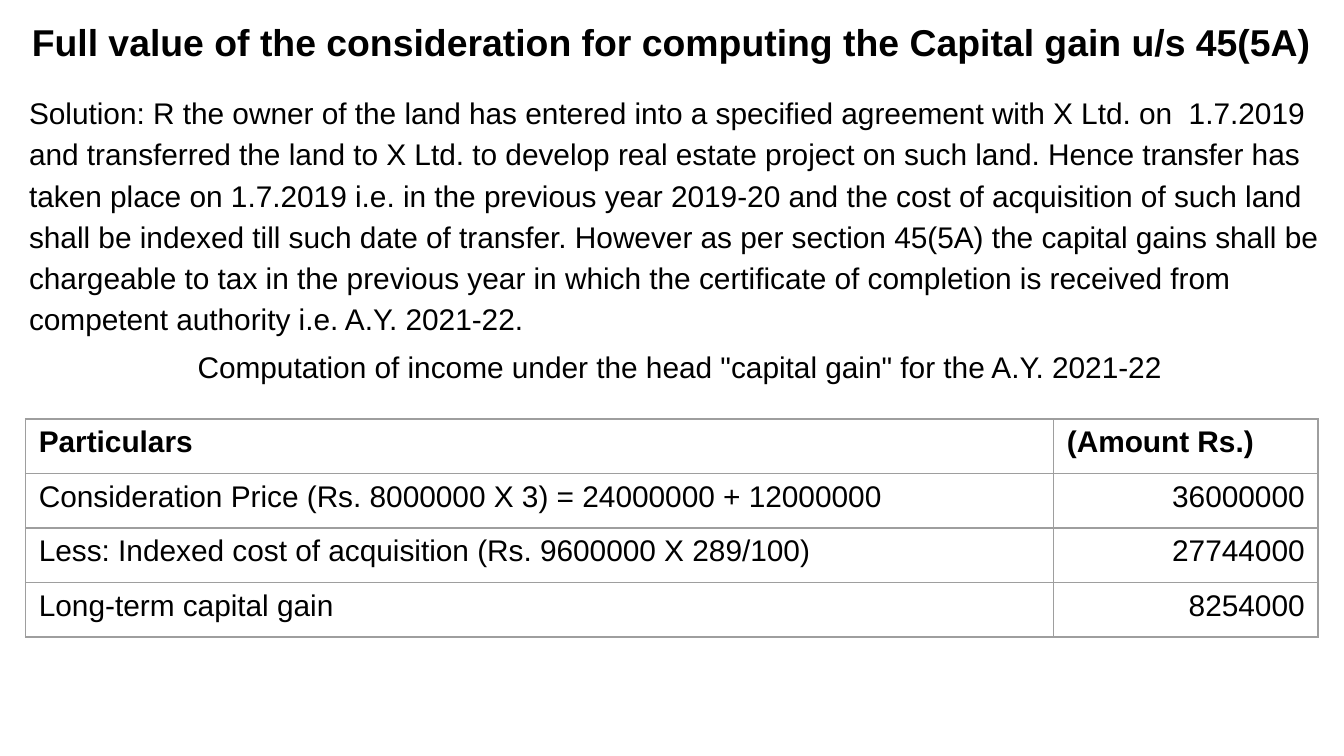
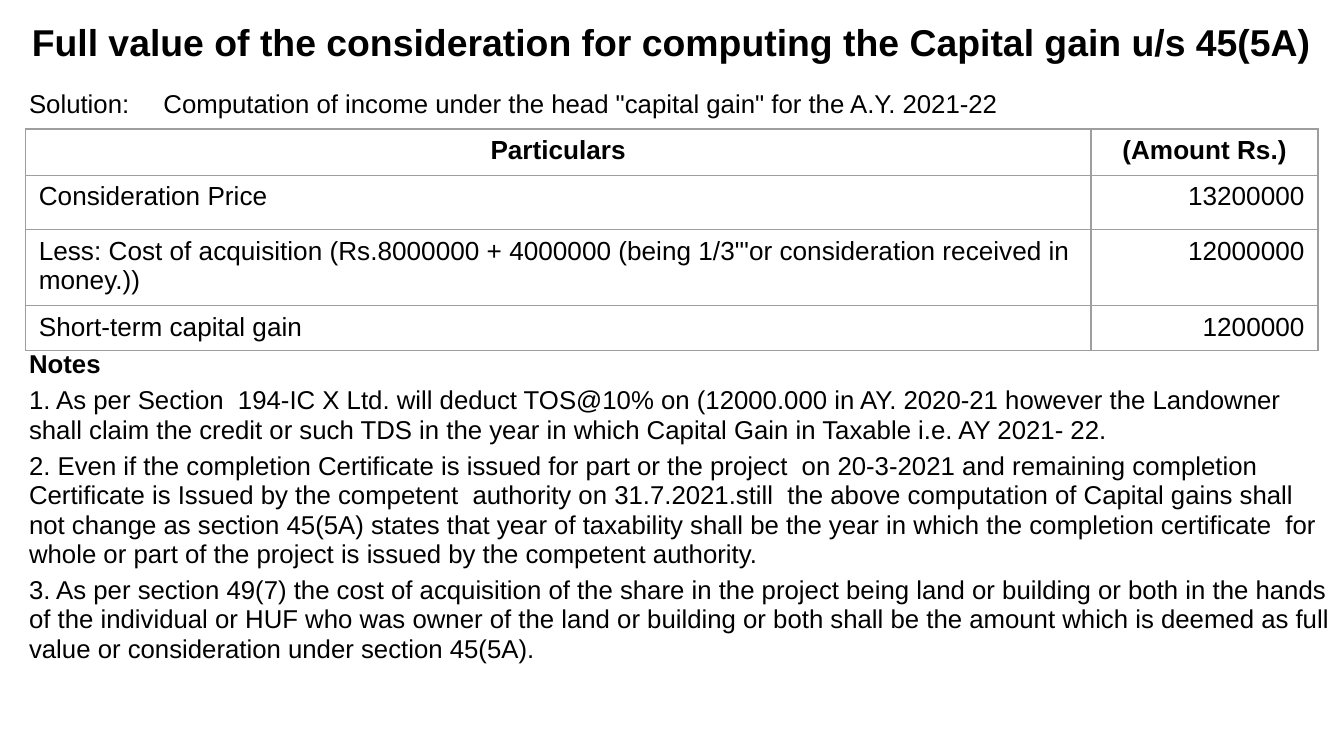
from dataclasses import dataclass

from lxml import etree
from pptx import Presentation
from pptx.dml.color import RGBColor
from pptx.enum.text import MSO_ANCHOR, PP_ALIGN
from pptx.oxml.ns import qn
from pptx.util import Cm, Pt

LEFT, CENTER, RIGHT = PP_ALIGN.LEFT, PP_ALIGN.CENTER, PP_ALIGN.RIGHT
TOP, MIDDLE = MSO_ANCHOR.TOP, MSO_ANCHOR.MIDDLE
BLANK_LAYOUT = 6

# Page measures in centimetres
PAGE_W, PAGE_H = 25.4, 14.29
TITLE_H = 1.57
TABLE_X = 0.48
BODY_INDENT = 0.3

HEADING = "Full value of the consideration for computing the Capital gain u/s 45(5A)"
COMPUTATION = 'Computation of income under the head "capital gain" for the A.Y. 2021-22'
COLUMN_HEADS = ("Particulars", "(Amount Rs.)")


@dataclass(frozen=True)
class Theme:
    font: str = "Arial"
    ink: RGBColor = RGBColor(0x00, 0x00, 0x00)
    rule: str = "9E9E9E"
    rule_width: float = 0.75
    title: float = 20
    large: float = 16
    table: float = 14
    notes: float = 13.8
    gap: float = 3.6


class Deck:
    """Holds the theme and the slide being filled."""

    def __init__(self, theme):
        self.theme = theme
        self.prs = Presentation()
        self.prs.slide_width, self.prs.slide_height = Cm(PAGE_W), Cm(PAGE_H)
        self.slide = None

    def new_slide(self):
        self.slide = self.prs.slides.add_slide(self.prs.slide_layouts[BLANK_LAYOUT])
        self.title(HEADING)

    def fill_paragraph(self, paragraph, text, size, bold=False, **layout):
        for name, value in layout.items():
            setattr(paragraph, name, value)
        run = paragraph.add_run()
        run.text = text
        font_values = {"name": self.theme.font, "size": Pt(size), "bold": bold}
        for name, value in font_values.items():
            setattr(run.font, name, value)
        run.font.color.rgb = self.theme.ink

    def frame(self, y, height, anchor):
        box = self.slide.shapes.add_textbox(0, Cm(y), Cm(PAGE_W), Cm(height))
        frame = box.text_frame
        frame.word_wrap = True
        frame.vertical_anchor = anchor
        return frame

    def title(self, text):
        frame = self.frame(0, TITLE_H, MIDDLE)
        self.fill_paragraph(frame.paragraphs[0], text, self.theme.title, True,
                            alignment=CENTER)

    def body(self, paragraphs, size, spacing):
        """Each paragraph is its text and a dict of format changes."""
        frame = self.frame(TITLE_H, PAGE_H - TITLE_H, TOP)
        for index, (text, changes) in enumerate(paragraphs):
            paragraph = frame.add_paragraph() if index else frame.paragraphs[0]
            layout = {"alignment": LEFT, "line_spacing": spacing,
                      "space_before": Pt(self.theme.gap)}
            self.fill_paragraph(paragraph, text, size, **(layout | changes))
            properties = paragraph._p.get_or_add_pPr()
            properties.set("marL", str(Cm(BODY_INDENT)))
            properties.set("indent", "0")

    def borders(self, cell):
        properties = cell._tc.get_or_add_tcPr()
        for side in ("lnL", "lnR", "lnT", "lnB"):
            line = etree.SubElement(properties, qn(f"a:{side}"),
                                    w=str(Pt(self.theme.rule_width)))
            fill = etree.SubElement(line, qn("a:solidFill"))
            etree.SubElement(fill, qn("a:srgbClr"), val=self.theme.rule)

    def table(self, y, widths, heights, entries, size, head_alignments):
        rows = [COLUMN_HEADS, *entries]
        table = self.slide.shapes.add_table(
            len(rows), len(widths), Cm(TABLE_X), Cm(y),
            Cm(sum(widths)), Cm(sum(heights))).table
        table.first_row = table.horz_banding = False
        for column, width in zip(table.columns, widths):
            column.width = Cm(width)
        for r, (row, height) in enumerate(zip(rows, heights)):
            table.rows[r].height = Cm(height)
            alignments = (LEFT, RIGHT) if r else head_alignments
            for c, (text, alignment) in enumerate(zip(row, alignments)):
                cell = table.cell(r, c)
                self.borders(cell)
                cell.fill.background()
                self.fill_paragraph(cell.text_frame.paragraphs[0], text, size,
                                    bold=r == 0, alignment=alignment)


def long_term_slide(deck):
    deck.new_slide()
    solution = (
        "Solution: R the owner of the land has entered into a specified agreement with "
        "X Ltd. on  1.7.2019 and transferred the land to X Ltd. to develop real estate "
        "project on such land. Hence transfer has taken place on 1.7.2019 i.e. in the "
        "previous year 2019-20 and the cost of acquisition of such land shall be indexed "
        "till such date of transfer. However as per section 45(5A) the capital gains shall "
        "be chargeable to tax in the previous year in which the certificate of completion "
        "is received from competent authority i.e. A.Y. 2021-22.")
    deck.body([(solution, {}), (COMPUTATION, {"alignment": CENTER})],
              deck.theme.large, 1.15)
    entries = [
        ("Consideration Price (Rs. 8000000 X 3) = 24000000 + 12000000", "36000000"),
        ("Less: Indexed cost of acquisition (Rs. 9600000 X 289/100)", "27744000"),
        ("Long-term capital gain", "8254000"),
    ]
    deck.table(7.92, (19.43, 5), [1.03] * 4, entries, deck.theme.large, (LEFT, LEFT))


def short_term_slide(deck):
    deck.new_slide()
    notes = [
        "1. As per Section  194-IC X Ltd. will deduct TOS@10% on (12000.000 in AY. 2020-21 "
        "however the Landowner shall claim the credit or such TDS in the year in which "
        "Capital Gain in Taxable i.e. AY 2021- 22.",
        "2. Even if the completion Certificate is issued for part or the project  on "
        "20-3-2021 and remaining completion Certificate is Issued by the competent  "
        "authority on 31.7.2021.still  the above computation of Capital gains shall not "
        "change as section 45(5A) states that year of taxability shall be the year in which "
        "the completion certificate  for whole or part of the project is issued by the "
        "competent authority.",
        "3. As per section 49(7) the cost of acquisition of the share in the project being "
        "land or building or both in the hands of the individual or HUF who was owner of "
        "the land or building or both shall be the amount which is deemed as full value or "
        "consideration under section 45(5A).",
    ]
    # The space before the notes leaves room for the table
    deck.body([(f"Solution:\t{COMPUTATION}", {}),
               ("Notes", {"bold": True, "space_before": Pt(124)}),
               *((note, {}) for note in notes)], deck.theme.notes, 0.95)
    entries = [
        ("Consideration Price", "13200000"),
        ("Less: Cost of acquisition (Rs.8000000 + 4000000 (being 1/3\"'or consideration "
         "received in money.))", "12000000"),
        ("Short-term capital gain", "1200000"),
    ]
    deck.table(2.44, (20.14, 4.29), (0.87, 1.03, 1.36, 0.81), entries,
               deck.theme.table, (CENTER, CENTER))


def main():
    deck = Deck(Theme())
    long_term_slide(deck)
    short_term_slide(deck)
    deck.prs.save("out.pptx")


if __name__ == "__main__":
    main()
